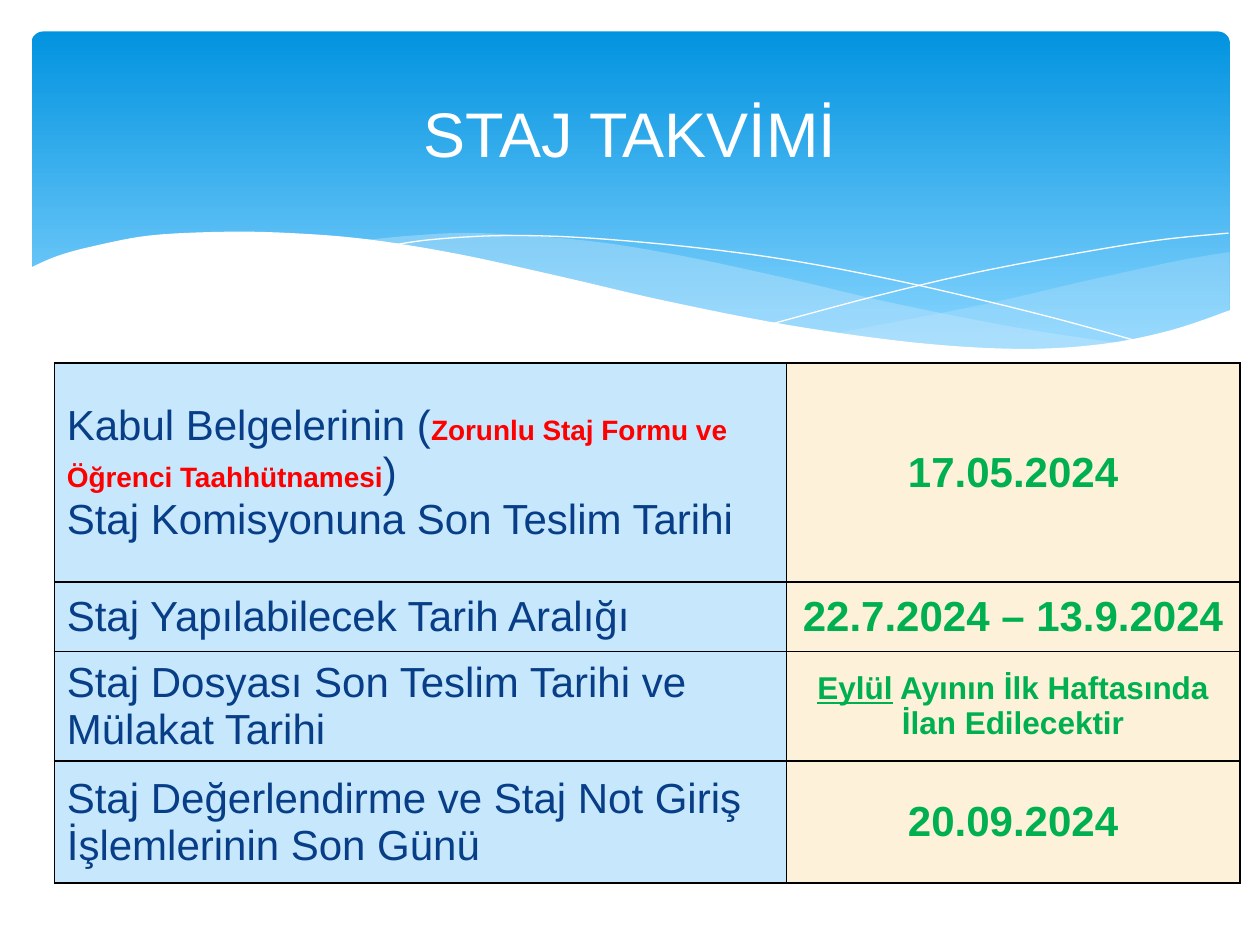
from dataclasses import dataclass

import lxml.etree
import pptx
import pptx.dml.color
import pptx.enum.shapes
import pptx.enum.text
import pptx.oxml.ns
import pptx.util

Pt = pptx.util.Pt
qn = pptx.oxml.ns.qn
ALIGN = pptx.enum.text.PP_ALIGN
MIDDLE = pptx.enum.text.MSO_ANCHOR.MIDDLE


@dataclass(frozen=True)
class Theme:
    font: str = "Arial"
    white: str = "FFFFFF"
    black: str = "000000"
    band_top: str = "0293E0"
    band_bottom: str = "83D3FE"
    pale_blue: str = "C6E7FC"
    cream: str = "FDF2D9"
    navy: str = "073E87"
    red: str = "FF0000"
    green: str = "00B050"
    title_size: int = 36
    body_size: int = 24
    note_size: int = 18
    form_size: int = 16


THEME = Theme()
LABEL = {"size": THEME.body_size, "color": THEME.navy, "bold": False}
FORM = {"size": THEME.form_size, "color": THEME.red, "bold": True}
DATE = {"size": THEME.body_size, "color": THEME.green, "bold": True}
NOTE = {**DATE, "size": THEME.note_size}
MONTH = {**NOTE, "underline": True}
TITLE = {"size": THEME.title_size, "color": THEME.white}

RIGHT_VEIL = [
    [(702.7, 144), (673.2, 149), (619.9, 160.6), (560.9, 174.2), (475.9, 190.8)],
    [(475.9, 190.8), (517.7, 195.8), (578.2, 200.2), (634.3, 196.6),
     (673.2, 188.6), (702.7, 177.8)],
]
CENTRE_VEIL = [
    [(643, 196.6), (581, 187.2), (508.3, 172.8), (452.9, 159.8), (389.5, 146.2),
     (334.8, 137.5), (273.6, 133.2), (236.2, 134.6), (205.9, 137.5)],
    [(205.9, 137.5), (246.2, 143.3), (290.9, 151.9), (353.5, 167), (420.5, 181.4),
     (478.8, 191.5), (529.9, 198), (581, 200.2), (617, 199.4), (643, 196.6)],
]
FALLING_LINE = [
    [(222.5, 140.4), (247.7, 136.8), (288.7, 134.6), (337.7, 136.1), (400.3, 141.8),
     (457.9, 149.8), (523.4, 162.7), (598.3, 180.7), (653, 195.8)],
]
RISING_LINE = [
    [(441.4, 185), (500.4, 169.2), (558.7, 155.5), (623.5, 143.3), (665.3, 136.8),
     (702, 133.2)],
]
WHITE_WAVE = [
    [(703.4, 177.1), (669.6, 188.6), (630, 196.6), (582.5, 199.4), (522.7, 195.8),
     (450.7, 185.8), (380.9, 172.1), (321.8, 158.4), (262.8, 145.4), (210.2, 136.8),
     (165.6, 133.2), (127.4, 132.5), (85.7, 134.6), (54.7, 140.4), (33.1, 146.2),
     (16.6, 153.4)],
    [(16.6, 236.9), (703.4, 236.9)],
]

COLUMN_WIDTHS = [418.3, 259.2]
ROW_HEIGHTS = [125.3, 39.6, 62.6, 69.8]
CALENDAR = [
    ([[("Kabul Belgelerinin (", LABEL),
       ("Zorunlu Staj Formu ve Öğrenci Taahhütnamesi", FORM), (")", LABEL)],
      [("Staj Komisyonuna Son Teslim Tarihi", LABEL)]],
     [[("17.05.2024", DATE)]]),
    ([[("Staj Yapılabilecek Tarih Aralığı", LABEL)]],
     [[("22.7.2024 – 13.9.2024", DATE)]]),
    ([[("Staj Dosyası Son Teslim Tarihi ve Mülakat Tarihi", LABEL)]],
     [[("Eylül", MONTH), (" Ayının İlk Haftasında İlan Edilecektir", NOTE)]]),
    ([[("Staj Değerlendirme ve Staj Not Giriş İşlemlerinin Son Günü", LABEL)]],
     [[("20.09.2024", DATE)]]),
]


def rgb(color):
    return pptx.dml.color.RGBColor.from_string(color)


def paint(fill, color):
    fill.solid()
    fill.fore_color.rgb = rgb(color)


def smooth(knots, steps=6):
    padded = [knots[0], *knots, knots[-1]]
    curve = [knots[0]]
    for before, start, end, after in zip(padded, padded[1:], padded[2:], padded[3:]):
        for step in range(1, steps + 1):
            t = step / steps
            curve.append(tuple(
                b + t * (c - a) / 2 + t**2 * (a - 2.5 * b + 2 * c - d / 2)
                + t**3 * (3 * b - a - 3 * c + d) / 2
                for a, b, c, d in zip(before, start, end, after)))
    return curve


def add_outline(page, curves, fill=None, alpha=None, line=None):
    points = [(Pt(x), Pt(y)) for knots in curves
              for x, y in (smooth(knots) if len(knots) > 2 else knots)]
    builder = page.shapes.build_freeform(*points[0], scale=1.0)
    builder.add_line_segments(points[1:], close=fill is not None)
    shape = builder.convert_to_shape()
    shape.shadow.inherit = False
    shape.fill.background()
    shape.line.fill.background()
    if fill:
        paint(shape.fill, fill)
    if alpha:
        color = shape.fill._xPr.find(qn("a:solidFill"))[0]
        lxml.etree.SubElement(color, qn("a:alpha"), val=str(alpha * 1000))
    if line:
        paint(shape.line.fill, line)
        shape.line.width = Pt(0)


def add_band(page):
    band = page.shapes.add_shape(
        pptx.enum.shapes.MSO_SHAPE.ROUNDED_RECTANGLE, Pt(18), Pt(18), Pt(684.7), Pt(194.4))
    band.adjustments[0] = 0.034
    band.shadow.inherit = False
    band.line.fill.background()
    band.fill.gradient()
    band.fill.gradient_angle = 270
    stops = [(0, THEME.band_top), (0.9, THEME.band_bottom)]
    for stop, (position, color) in zip(band.fill.gradient_stops, stops):
        stop.position = position
        stop.color.rgb = rgb(color)


def write(frame, paragraphs, align):
    for index, spans in enumerate(paragraphs):
        para = frame.add_paragraph() if index else frame.paragraphs[0]
        para.alignment = align
        for text, style in spans:
            span = para.add_run()
            span.text = text
            span.font.color.rgb = rgb(style["color"])
            values = {**style, "name": THEME.font, "size": Pt(style["size"])}
            del values["color"]
            for name, value in values.items():
                setattr(span.font, name, value)


def add_title(page, text):
    box = page.shapes.add_textbox(Pt(36), Pt(26.6), Pt(648), Pt(98.6))
    frame = box.text_frame
    for name, value in {"word_wrap": True, "vertical_anchor": MIDDLE}.items():
        setattr(frame, name, value)
    write(frame, [[(text, TITLE)]], ALIGN.CENTER)


def add_borders(cell):
    properties = cell._tc.get_or_add_tcPr()
    for index, side in enumerate(("lnL", "lnR", "lnT", "lnB")):
        border = lxml.etree.Element(qn(f"a:{side}"), w=str(Pt(1)))
        fill = lxml.etree.SubElement(border, qn("a:solidFill"))
        lxml.etree.SubElement(fill, qn("a:srgbClr"), val=THEME.black)
        properties.insert(index, border)


def add_calendar(page):
    table = page.shapes.add_table(
        len(ROW_HEIGHTS), len(COLUMN_WIDTHS), Pt(31), Pt(207.4),
        Pt(sum(COLUMN_WIDTHS)), Pt(sum(ROW_HEIGHTS))).table
    for name in ("first_row", "horz_banding"):
        setattr(table, name, False)
    for column, width in zip(table.columns, COLUMN_WIDTHS):
        column.width = Pt(width)
    looks = [(THEME.pale_blue, ALIGN.LEFT), (THEME.cream, ALIGN.CENTER)]
    for row, height, contents in zip(table.rows, ROW_HEIGHTS, CALENDAR):
        row.height = Pt(height)
        for cell, paragraphs, (color, align) in zip(row.cells, contents, looks):
            cell.vertical_anchor = MIDDLE
            paint(cell.fill, color)
            add_borders(cell)
            write(cell.text_frame, paragraphs, align)


def main():
    deck = pptx.Presentation()
    deck.slide_width, deck.slide_height = Pt(720), Pt(540)
    page = deck.slides.add_slide(deck.slide_layouts[6])
    add_band(page)
    add_outline(page, RIGHT_VEIL, fill=THEME.pale_blue, alpha=29)
    add_outline(page, CENTRE_VEIL, fill=THEME.pale_blue, alpha=40)
    add_outline(page, FALLING_LINE, line=THEME.white)
    add_outline(page, RISING_LINE, line=THEME.white)
    add_outline(page, WHITE_WAVE, fill=THEME.white)
    add_calendar(page)
    add_title(page, "STAJ TAKVİMİ")
    deck.save("out.pptx")


if __name__ == "__main__":
    main()
